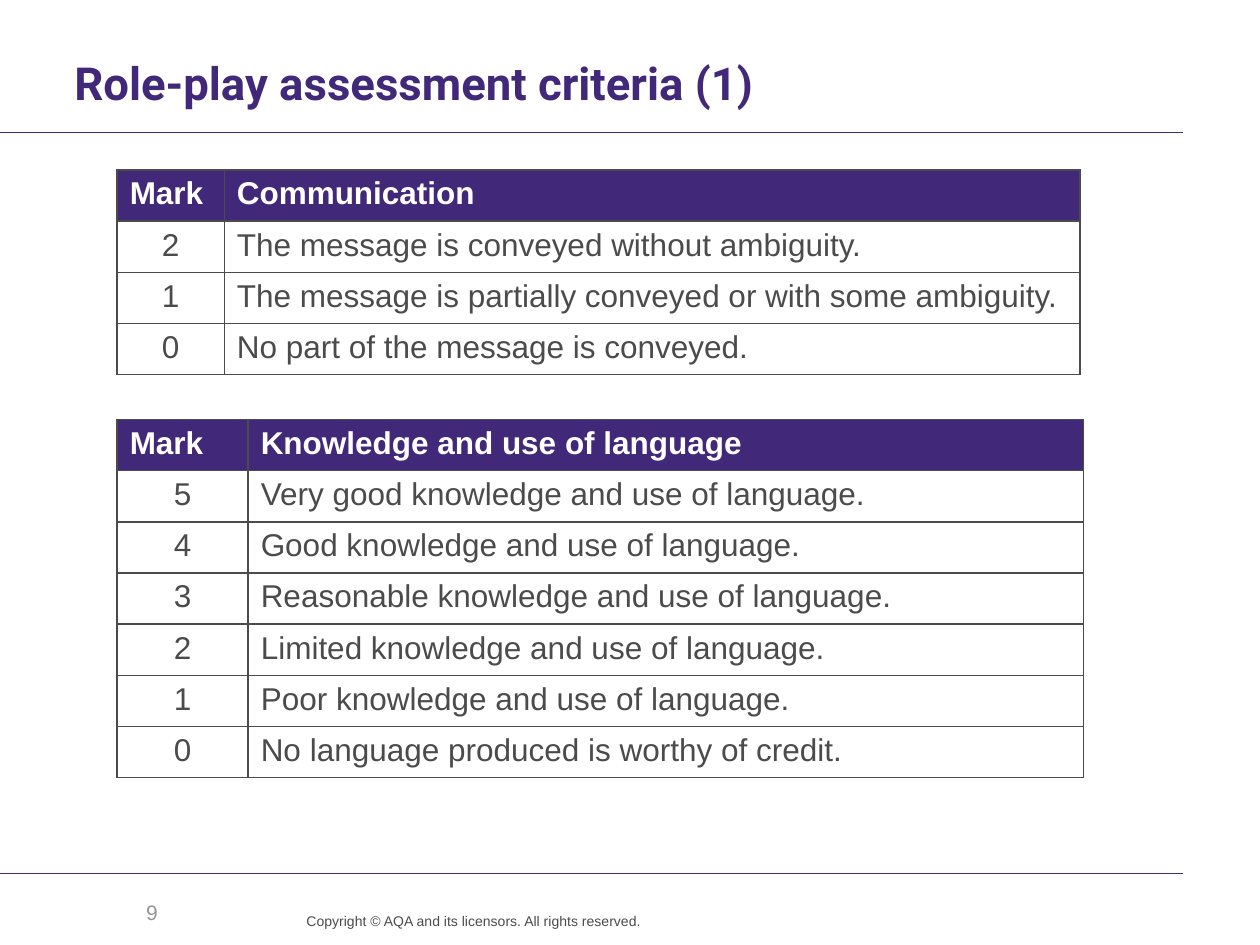
"""Build the role-play assessment criteria slide."""
from lxml import etree
from pptx import Presentation
from pptx.dml.color import RGBColor
from pptx.enum.shapes import MSO_CONNECTOR
from pptx.enum.text import MSO_ANCHOR, PP_ALIGN
from pptx.oxml import parse_xml
from pptx.oxml.ns import nsdecls, qn
from pptx.util import Inches, Pt

PURPLE = RGBColor(0x41, 0x28, 0x78)
DARK = RGBColor(0x4B, 0x4B, 0x4B)
GREY = RGBColor(0x96, 0x96, 0x96)
WHITE = RGBColor(0xFF, 0xFF, 0xFF)
STRAIGHT = MSO_CONNECTOR.STRAIGHT
TOP, MIDDLE = MSO_ANCHOR.TOP, MSO_ANCHOR.MIDDLE
LEFT, CENTER, RIGHT = PP_ALIGN.LEFT, PP_ALIGN.CENTER, PP_ALIGN.RIGHT
ROW = 0.406


def style(para, text, size, color, align=LEFT, bold=False, face="Arial"):
    para.text = text
    para.alignment = align
    para.font.size = Pt(size)
    para.font.name = face
    para.font.bold = bold
    para.font.color.rgb = color


def add_text(box, pads, anchor, lead, *look):
    frame = slide.shapes.add_textbox(*map(Inches, box)).text_frame
    frame.word_wrap = True
    frame.vertical_anchor = anchor
    (frame.margin_left, frame.margin_top,
     frame.margin_right, frame.margin_bottom) = map(Inches, pads)
    para = frame.paragraphs[0]
    style(para, *look)
    if lead:
        para.line_spacing = Pt(lead)


prs = Presentation()
prs.slide_width, prs.slide_height = Inches(10), Inches(7.5)
slide = prs.slides.add_slide(prs.slide_layouts[6])

for y in (1.05, 6.93):
    rule = slide.shapes.add_connector(
        STRAIGHT, 0, Inches(y), Inches(9.39), Inches(y))
    rule.line.color.rgb = PURPLE
    rule.line.width = Pt(0.6)
    etree.SubElement(rule.element.spPr, qn("a:effectLst"))

add_text((0.59, 0.48, 8.8, 0.47), (0, 0, 0.1, 0), TOP, 28,
         "Role-play assessment criteria (1)", 26, PURPLE, LEFT, True, "Roboto")
add_text((0.59, 7.04, 0.76, 0.4), (0.1, 0.05, 0.1, 0.05), MIDDLE, None,
         "9", 12, GREY, RIGHT)
add_text((2.16, 7.24, 2.93, 0.26), (0, 0, 0, 0), TOP, 10,
         "Copyright © AQA and its licensors. All rights reserved.",
         8, DARK, RIGHT)

grids = [
    (1.35, (0.85, 6.79), "Communication", [
        "The message is conveyed without ambiguity.",
        "The message is partially conveyed or with some ambiguity.",
        "No part of the message is conveyed.",
    ]),
    (3.33, (1.04, 6.63), "Knowledge and use of language", [
        "Very good knowledge and use of language.",
        "Good knowledge and use of language.",
        "Reasonable knowledge and use of language.",
        "Limited knowledge and use of language.",
        "Poor knowledge and use of language.",
        "No language produced is worthy of credit.",
    ]),
]

for top, widths, head, bands in grids:
    count = len(bands)
    rows = [("Mark", head)]
    rows += [(str(count - 1 - i), band) for i, band in enumerate(bands)]
    table = slide.shapes.add_table(
        count + 1, 2, Inches(0.93), Inches(top),
        Inches(sum(widths)), Inches(ROW * (count + 1))).table
    table.horz_banding = False
    for col, width in zip(table.columns, widths):
        col.width = Inches(width)
    for r, row in enumerate(rows):
        table.rows[r].height = Inches(ROW)
        for c, text in enumerate(row):
            cell = table.cell(r, c)
            props = cell._tc.get_or_add_tcPr()
            for side in ("lnL", "lnR", "lnT", "lnB"):
                props.append(parse_xml(
                    f'<a:{side} {nsdecls("a")} w="{Pt(1)}"><a:solidFill>'
                    f'<a:srgbClr val="{DARK}"/></a:solidFill></a:{side}>'))
            para = cell.text_frame.paragraphs[0]
            if r == 0:
                cell.fill.solid()
                cell.fill.fore_color.rgb = PURPLE
                style(para, text, 18, WHITE, LEFT, True)
            else:
                cell.fill.background()
                style(para, text, 18, DARK, LEFT if c else CENTER)

prs.save("out.pptx")
